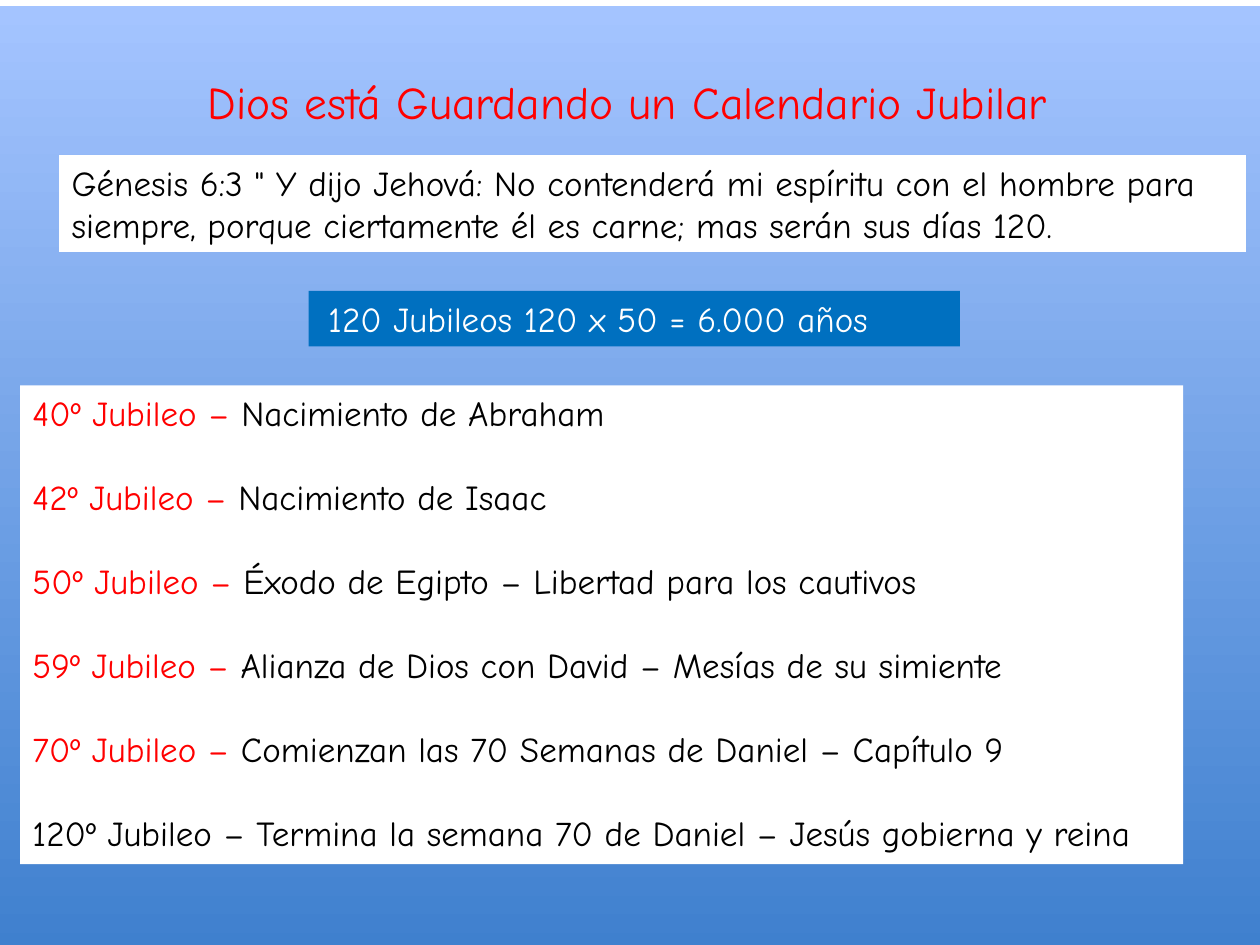
from dataclasses import dataclass

from pptx import Presentation
from pptx import util as u
from pptx.dml.color import RGBColor
from pptx.enum import shapes, text

RED = RGBColor(0xFF, 0x00, 0x00)
BLACK = RGBColor(0x00, 0x00, 0x00)
WHITE = RGBColor(0xFF, 0xFF, 0xFF)
BLUE = RGBColor(0x00, 0x70, 0xC0)
SKY_LOW = RGBColor(0x3F, 0x80, 0xCE)
SKY_HIGH = RGBColor(0xA4, 0xC4, 0xFF)
FONT = "Comic Neue"
BODY_SIZE = 20
ITEM_GAP = 24


@dataclass
class Run:
    words: str
    color: RGBColor


@dataclass
class Panel:
    left: float
    top: float
    width: float
    height: float
    paragraphs: list[list[Run]]
    fill: RGBColor | None = None
    size: float = BODY_SIZE
    inset: float = 7.2


@dataclass
class Jubilee:
    number: int
    event: str
    label_color: RGBColor = RED

    def runs(self) -> list[Run]:
        return [Run(f"{self.number}º Jubileo – ", self.label_color), Run(self.event, BLACK)]


JUBILEES = [
    Jubilee(40, "Nacimiento de Abraham"),
    Jubilee(42, "Nacimiento de Isaac"),
    Jubilee(50, "Éxodo de Egipto – Libertad para los cautivos"),
    Jubilee(59, "Alianza de Dios con David – Mesías de su simiente"),
    Jubilee(70, "Comienzan las 70 Semanas de Daniel – Capítulo 9"),
    Jubilee(120, "Termina la semana 70 de Daniel – Jesús gobierna y reina", BLACK),
]

VERSE = (
    'Génesis 6:3 " Y dijo Jehová: No contenderá mi espíritu con el hombre para siempre, '
    "porque ciertamente él es carne; mas serán sus días 120."
)

PANELS = [
    Panel(111.6, 38.9, 522.7, 38.9,
          [[Run("Dios está Guardando un Calendario Jubilar", RED)]], size=26),
    Panel(33.8, 88.6, 678.2, 55.4, [[Run(VERSE, BLACK)]], WHITE),
    Panel(176.4, 166.3, 372.2, 31.7,
          [[Run("120 Jubileos 120 x 50 = 6.000 años", WHITE)]], BLUE, inset=11.2),
    Panel(11.5, 220.3, 664.6, 273.6, [jubilee.runs() for jubilee in JUBILEES], WHITE),
]


def draw_sky(slide) -> None:
    sky = slide.shapes.add_shape(
        shapes.MSO_SHAPE.RECTANGLE, u.Pt(0), u.Pt(3.6), u.Pt(720), u.Pt(540))
    sky.shadow.inherit = False
    sky.line.fill.background()
    sky.fill.gradient()
    sky.fill.gradient_angle = 90
    for stop, position, color in zip(sky.fill.gradient_stops, (0, 1), (SKY_LOW, SKY_HIGH)):
        stop.position = position
        stop.color.rgb = color


def draw_panel(slide, panel: Panel) -> None:
    shape = slide.shapes.add_textbox(
        u.Pt(panel.left), u.Pt(panel.top), u.Pt(panel.width), u.Pt(panel.height))
    if panel.fill is not None:
        shape.fill.solid()
        shape.fill.fore_color.rgb = panel.fill
    frame = shape.text_frame
    frame.word_wrap = True
    frame.auto_size = text.MSO_AUTO_SIZE.SHAPE_TO_FIT_TEXT
    frame.margin_left = u.Pt(panel.inset)
    for index, runs in enumerate(panel.paragraphs):
        paragraph = frame.add_paragraph() if index else frame.paragraphs[0]
        paragraph.space_before = u.Pt(ITEM_GAP if index else 0)
        for item in runs:
            run = paragraph.add_run()
            run.text = item.words
            run.font.name = FONT
            run.font.size = u.Pt(panel.size)
            run.font.color.rgb = item.color


def main() -> None:
    presentation = Presentation()
    presentation.slide_width = u.Pt(720)
    presentation.slide_height = u.Pt(540)
    slide = presentation.slides.add_slide(presentation.slide_layouts[6])
    draw_sky(slide)
    for panel in PANELS:
        draw_panel(slide, panel)
    presentation.save("out.pptx")


if __name__ == "__main__":
    main()
